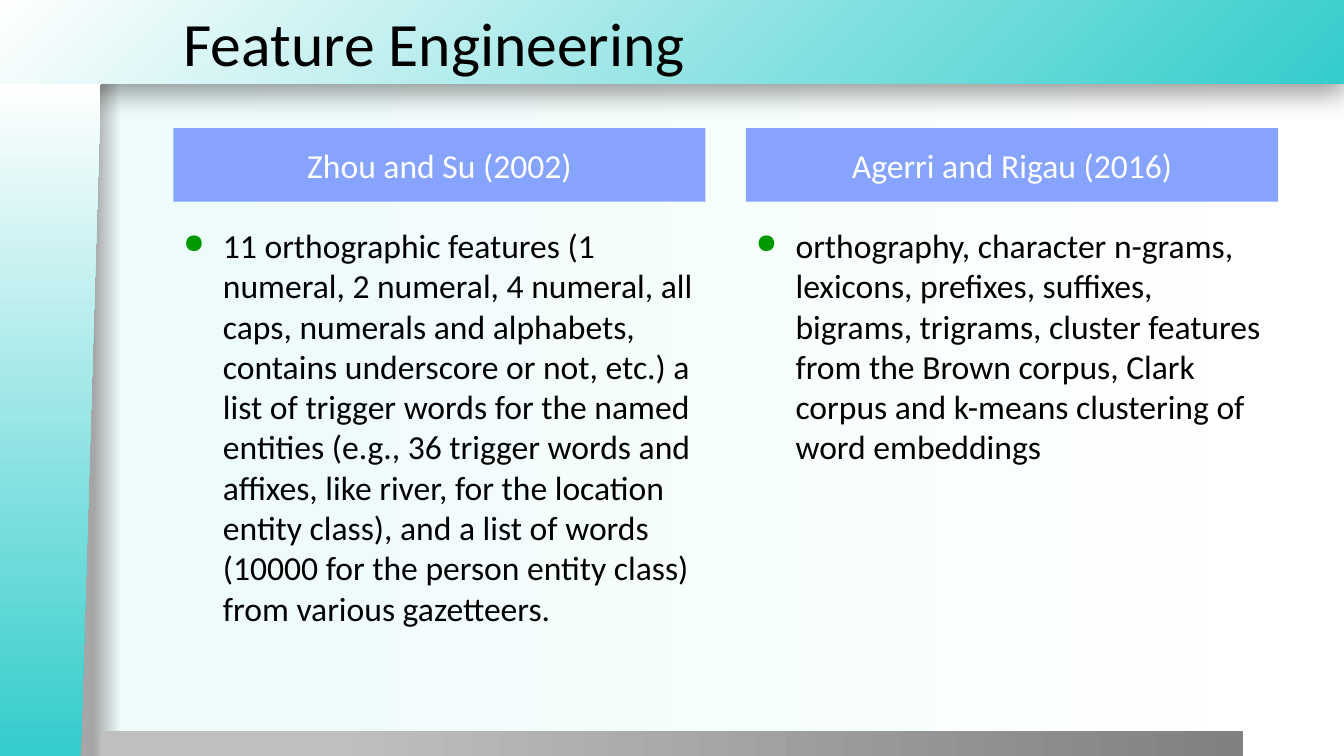
from dataclasses import dataclass

from pptx import Presentation
from pptx import util as u
from pptx.dml.color import RGBColor
from pptx.enum import shapes, text
from pptx.oxml import parse_xml
from pptx.oxml.ns import nsdecls


@dataclass(frozen=True)
class Theme:
    font: str = "Calibri"
    title_size: int = 44
    text_size: int = 24
    ink: str = "000000"
    paper: str = "FFFFFF"
    heading: str = "85A3FF"
    bullet: str = "009900"
    accent: str = "34CCCC"
    background: tuple = ((7, "A6A6A6"), (9, "EDFBFB"), (100, "FFFFFF"))
    floor: tuple = ((20, "BFBFBF"), (100, "808080"))


LINEAR = '<a:lin ang="0" scaled="0"/>'
FROM_BOTTOM_RIGHT = '<a:path path="circle"><a:fillToRect l="100000" t="100000"/></a:path>'


def a_element(tag, attributes="", content=""):
    """Build one DrawingML element."""
    return parse_xml(f"<a:{tag} {nsdecls('a')} {attributes}>{content}</a:{tag}>")


class SlideBuilder:
    def __init__(self, slide, theme):
        self.slide = slide
        self.theme = theme

    def gradient(self, fill, owner, stops, direction=LINEAR):
        """Give owner's fill any number of (percent, colour) stops."""
        fill.gradient()
        default = owner.xpath(".//a:gradFill")[0]
        stop_list = "".join(
            f'<a:gs pos="{percent * 1000}"><a:srgbClr val="{colour}"/></a:gs>'
            for percent, colour in stops
        )
        content = f"<a:gsLst>{stop_list}</a:gsLst>{direction}"
        default.getparent().replace(
            default, a_element("gradFill", 'rotWithShape="1"', content))

    def background(self, stops):
        self.gradient(self.slide.background.fill, self.slide.element, stops)

    def panel(self, box, stops, direction=LINEAR, kind=shapes.MSO_SHAPE.RECTANGLE):
        panel = self.slide.shapes.add_shape(kind, *map(u.Cm, box))
        self.gradient(panel.fill, panel.element, stops, direction)
        panel.line.fill.background()
        panel.shadow.inherit = False
        return panel

    def drop_shadow(self, panel):
        blur, distance = u.Pt(20), u.Pt(6)
        panel.element.xpath(".//a:effectLst")[0].append(a_element(
            "outerShdw",
            f'blurRad="{blur}" dist="{distance}" dir="5400000" algn="t" rotWithShape="0"',
            f'<a:srgbClr val="{self.theme.ink}"><a:alpha val="40000"/></a:srgbClr>'))

    def set_text(self, frame, wording, size, colour, anchor, align):
        layout = {"word_wrap": True, "auto_size": text.MSO_AUTO_SIZE.NONE,
                  "vertical_anchor": anchor}
        for name, value in layout.items():
            setattr(frame, name, value)
        frame.text = wording
        paragraph = frame.paragraphs[0]
        paragraph.alignment = align
        font = paragraph.runs[0].font
        for name, value in {"name": self.theme.font, "size": u.Pt(size)}.items():
            setattr(font, name, value)
        font.color.rgb = RGBColor.from_string(colour)
        return paragraph

    def title(self, wording, box):
        title = self.slide.shapes.title
        for side, length in zip(("left", "top", "width", "height"), box):
            setattr(title, side, u.Cm(length))
        self.set_text(title.text_frame, wording, self.theme.title_size, self.theme.ink,
                      text.MSO_ANCHOR.MIDDLE, text.PP_ALIGN.LEFT)
        self.slide.shapes.element.append(title.element)  # in front of the banner

    def heading(self, wording, box):
        heading = self.slide.shapes.add_shape(
            shapes.MSO_SHAPE.RECTANGLE, *map(u.Cm, box))
        heading.fill.solid()
        heading.fill.fore_color.rgb = RGBColor.from_string(self.theme.heading)
        heading.line.fill.background()
        heading.shadow.inherit = False
        self.set_text(heading.text_frame, wording, self.theme.text_size, self.theme.paper,
                      text.MSO_ANCHOR.MIDDLE, text.PP_ALIGN.CENTER)

    def bullet(self, wording, box):
        body = self.slide.shapes.add_textbox(*map(u.Cm, box))
        paragraph = self.set_text(body.text_frame, wording, self.theme.text_size,
                                  self.theme.ink, text.MSO_ANCHOR.TOP, text.PP_ALIGN.LEFT)
        properties = paragraph._p.get_or_add_pPr()
        indent = u.Cm(1)
        properties.set("marL", str(indent))
        properties.set("indent", str(-indent))
        properties.append(a_element(
            "buClr", content=f'<a:srgbClr val="{self.theme.bullet}"/>'))
        properties.append(a_element("buSzPct", 'val="80000"'))
        properties.append(a_element("buChar", 'char="●"'))


SLIDE_WIDTH, SLIDE_HEIGHT = 33.87, 19.05
BANNER_HEIGHT = 2.11
STRIP_WIDTH = 2.54
COLUMN_LEFT, COLUMN_WIDTH, COLUMN_STEP = 4.37, 13.41, 14.43

STUDIES = [
    ("Zhou and Su (2002)",
     "11 orthographic features (1 numeral, 2 numeral, 4 numeral, all caps, numerals "
     "and alphabets, contains underscore or not, etc.) a list of trigger words for the "
     "named entities (e.g., 36 trigger words and affixes, like river, for the location "
     "entity class), and a list of words (10000 for the person entity class) from "
     "various gazetteers."),
    ("Agerri and Rigau (2016)",
     "orthography, character n-grams, lexicons, prefixes, suffixes, bigrams, trigrams, "
     "cluster features from the Brown corpus, Clark corpus and k-means clustering of "
     "word embeddings"),
]


def draw_frame(builder):
    """Draw the background, top banner, floor and slanted left strip."""
    theme = builder.theme
    fade = ((0, theme.accent), (100, theme.paper))
    builder.background(theme.background)
    banner = builder.panel((0, 0, SLIDE_WIDTH, BANNER_HEIGHT), fade, FROM_BOTTOM_RIGHT)
    builder.drop_shadow(banner)
    builder.panel((STRIP_WIDTH, 18.41, 28.78, 0.64), theme.floor)

    length = SLIDE_HEIGHT - BANNER_HEIGHT
    strip_box = ((STRIP_WIDTH - length) / 2,
                 BANNER_HEIGHT + (length - STRIP_WIDTH) / 2, length, STRIP_WIDTH)
    strip = builder.panel(strip_box, fade,
                          kind=shapes.MSO_SHAPE.FLOWCHART_MANUAL_INPUT)
    strip.rotation = 270
    strip.element.spPr.xfrm.set("flipV", "1")


def main():
    deck = Presentation()
    deck.slide_width, deck.slide_height = u.Cm(SLIDE_WIDTH), u.Cm(SLIDE_HEIGHT)
    title_only = deck.slide_layouts[5]
    builder = SlideBuilder(deck.slides.add_slide(title_only), Theme())
    draw_frame(builder)
    builder.title("Feature Engineering",
                  (COLUMN_LEFT, 0, SLIDE_WIDTH - COLUMN_LEFT, BANNER_HEIGHT))
    for column, (study, features) in enumerate(STUDIES):
        left = COLUMN_LEFT + column * COLUMN_STEP
        builder.heading(study, (left, 3.23, COLUMN_WIDTH, 1.85))
        builder.bullet(features, (left, 5.54, COLUMN_WIDTH, 12.62))
    deck.save("out.pptx")


if __name__ == "__main__":
    main()
